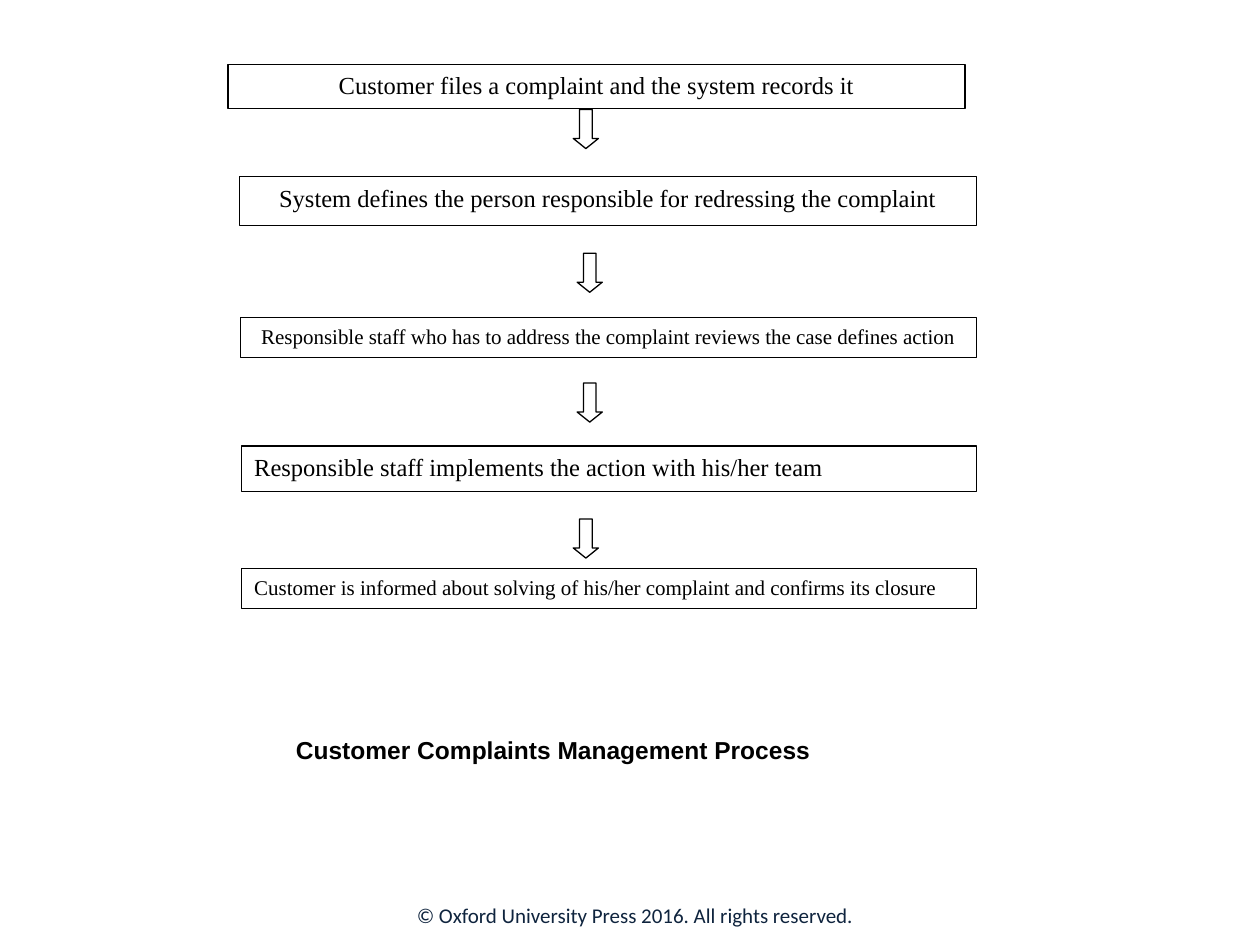
from pptx import Presentation
from pptx.dml.color import RGBColor
from pptx.enum import shapes, text
from pptx.util import Pt

SERIF = "Times New Roman"
CENTER = text.PP_ALIGN.CENTER
LEFT = text.PP_ALIGN.LEFT

STEPS = [
    ("Customer files a complaint and the system records it",
     (130.3, 36.7, 421.2, 25.2), 14, CENTER),
    ("System defines the person responsible for redressing the complaint",
     (136.8, 100.8, 421.2, 28.1), 14, CENTER),
    ("Responsible staff who has to address the complaint reviews the case defines action",
     (137.5, 181.4, 420.5, 23), 12, CENTER),
    ("Responsible staff implements the action with his/her team",
     (138.2, 254.9, 419.8, 25.9), 14, LEFT),
    ("Customer is informed about solving of his/her complaint and confirms its closure",
     (138.2, 324.7, 419.8, 23), 12, LEFT),
]
ARROWS = [(327.6, 62.6), (329.8, 144.7), (329.8, 218.9), (327.6, 296.6)]


def rgb(value):
    """Return the colour for a hex string."""
    return RGBColor.from_string(value)


def put_text(sp, words, font=SERIF, size=14, bold=False, color="000000",
             align=LEFT, anchor=text.MSO_ANCHOR.TOP):
    """Write one formatted paragraph into a shape."""
    tf = sp.text_frame
    tf.word_wrap = True
    tf.vertical_anchor = anchor
    p = tf.paragraphs[0]
    p.alignment = align
    r = p.add_run()
    r.text = words
    r.font.name = font
    r.font.size = Pt(size)
    r.font.bold = bold
    r.font.color.rgb = rgb(color)


def add_outlined(s, kind, box):
    """Add a white preset shape with a thin black outline."""
    sp = s.shapes.add_shape(kind, *map(Pt, box))
    sp.shadow.inherit = False
    sp.fill.solid()
    sp.fill.fore_color.rgb = rgb("FFFFFF")
    sp.line.color.rgb = rgb("000000")
    sp.line.width = Pt(0.75)
    return sp


def add_flow(s):
    """Draw the process steps and the arrows between them."""
    for words, box, size, align in STEPS:
        sp = add_outlined(s, shapes.MSO_SHAPE.RECTANGLE, box)
        put_text(sp, words, size=size, align=align)
    for x, y in ARROWS:
        sp = add_outlined(s, shapes.MSO_SHAPE.DOWN_ARROW, (x, y, 14.4, 22.3))
        sp.adjustments[0] = 0.5
        sp.adjustments[1] = 0.4


def add_label(s, words, box, **fmt):
    """Add a text box with vertically centred text."""
    sp = s.shapes.add_textbox(*map(Pt, box))
    put_text(sp, words, anchor=text.MSO_ANCHOR.MIDDLE, **fmt)


def main():
    """Build the complaints process slide."""
    prs = Presentation()
    prs.slide_width, prs.slide_height = Pt(720), Pt(540)
    s = prs.slides.add_slide(prs.slide_layouts[6])
    add_flow(s)
    add_label(s, "Customer Complaints Management Process",
              (162, 395, 486, 67), font="Arial", bold=True)
    add_label(s, "© Oxford University Press 2016. All rights reserved.",
              (212.4, 508.3, 301, 28.8), font="Calibri", size=12,
              color="0F243E", align=CENTER)
    prs.save("out.pptx")


if __name__ == "__main__":
    main()
